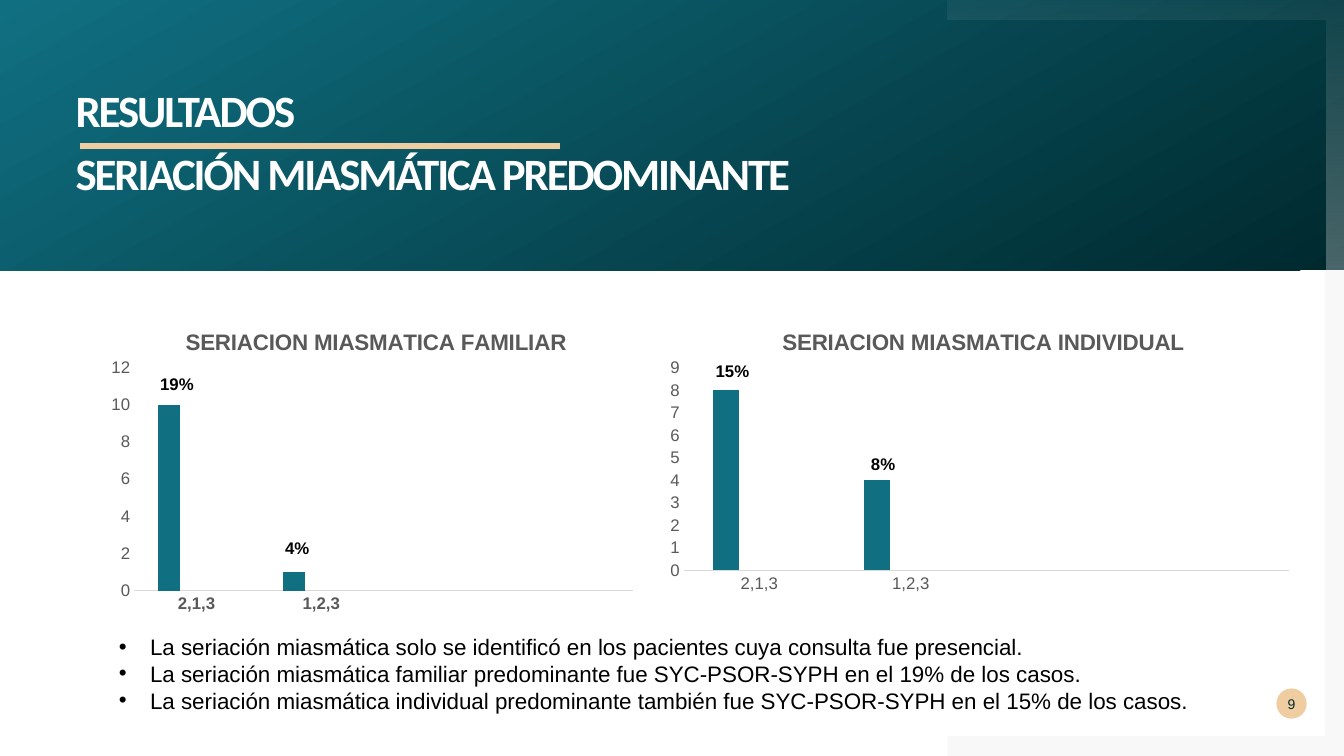
from dataclasses import dataclass

from lxml.etree import SubElement
from pptx import Presentation
from pptx.chart.data import CategoryChartData
from pptx.dml.color import RGBColor as RGB
from pptx.enum.chart import XL_CHART_TYPE as ChartType, XL_TICK_MARK as Tick
from pptx.enum.shapes import MSO_CONNECTOR as Connector, MSO_SHAPE as Shape
from pptx.enum.text import MSO_ANCHOR as Anchor, PP_ALIGN as Align
from pptx.oxml import parse_xml
from pptx.oxml.ns import nsdecls, qn
from pptx.util import Inches, Pt


@dataclass(frozen=True)
class Theme:
    teal: str = "107082"
    deep: str = "00292E"
    sand: str = "F0CDA1"
    white: str = "FFFFFF"
    black: str = "000000"
    grey: str = "808080"
    label: str = "595959"
    rule: str = "D9D9D9"
    series: tuple = ("107082", "00AEEF", "EC7216")
    heading: str = "Calibri"
    body: str = "Arial"
    heading_size: float = 32
    body_size: float = 16
    label_size: float = 12
    small_size: float = 10


def color(value):
    return RGB.from_string(value)


def style_font(font, size, hue, name, bold=False):
    font.size, font.name, font.bold = Pt(size), name, bold
    font.color.rgb = color(hue)


def write(frame, text, *, size, hue, name, bold=False, align=None, line=None,
          spacing=None, bullet=None, inset=None, wrap=True):
    """Fill a text frame, one paragraph per line of text."""
    frame.word_wrap = wrap
    if inset is not None:
        frame.margin_left = frame.margin_right = Inches(inset)
        frame.margin_top = frame.margin_bottom = Inches(inset)
    for index, words in enumerate(text.split("\n")):
        paragraph = frame.add_paragraph() if index else frame.paragraphs[0]
        paragraph.alignment, paragraph.line_spacing = align, line
        run = paragraph.add_run()
        run.text = words
        style_font(run.font, size, hue, name, bold)
        if spacing is not None:
            run.font._element.set("spc", str(int(spacing * 100)))
        if bullet:
            props = paragraph._p.get_or_add_pPr()
            props.set("marL", str(Inches(0.31)))
            props.set("indent", str(Inches(-0.31)))
            SubElement(props, qn("a:buFont")).set("typeface", name)
            SubElement(props, qn("a:buChar")).set("char", bullet)


def place(parent, box, left, top, width=None, height=None):
    """Set a chart part's position, in inches, within the chart's box."""
    values = {"x": (left - box[0]) / box[2], "y": (top - box[1]) / box[3]}
    target = ""
    if width:
        values.update(w=width / box[2], h=height / box[3])
        target = '<c:layoutTarget val="inner"/>'
    modes = "".join(f'<c:{axis}Mode val="edge"/>' for axis in "xy")
    sizes = "".join(f'<c:{key} val="{value:.4f}"/>' for key, value in values.items())
    layout = parse_xml(f'<c:layout {nsdecls("c")}><c:manualLayout>{target}{modes}{sizes}'
                       '</c:manualLayout></c:layout>')
    for old in parent.findall(qn("c:layout")):
        parent.remove(old)
    text = parent.find(qn("c:tx"))
    parent.insert(0 if text is None else 1, layout)


class SlideBuilder:
    def __init__(self, slide, theme):
        self.slide, self.theme, self.shapes = slide, theme, slide.shapes

    def paint(self, shape, fill, angle=None, alphas=()):
        """Apply one solid colour, or a gradient when an angle is given."""
        shape.shadow.inherit = False
        shape.line.fill.background()
        if angle is None:
            shape.fill.solid()
            shape.fill.fore_color.rgb = color(fill)
        else:
            shape.fill.gradient()
            shape.fill.gradient_angle = angle
            for stop, hue in zip(shape.fill.gradient_stops, fill):
                stop.color.rgb = color(hue)
        for node, alpha in zip(shape._element.spPr.iter(qn("a:srgbClr")), alphas):
            SubElement(node, qn("a:alpha")).set("val", str(alpha * 1000))
        return shape

    def block(self, kind, box, fill, angle=None):
        return self.paint(self.shapes.add_shape(kind, *map(Inches, box)), fill, angle)

    def outline(self, points, fill, angle=None, alphas=()):
        start, *rest = [(Inches(x), Inches(y)) for x, y in points]
        builder = self.shapes.build_freeform(*start)
        builder.add_line_segments(rest, close=True)
        return self.paint(builder.convert_to_shape(), fill, angle, alphas)

    def line(self, x1, y1, x2, y2, hue, width):
        rule = self.shapes.add_connector(Connector.STRAIGHT, *map(Inches, (x1, y1, x2, y2)))
        rule.line.color.rgb = color(hue)
        rule.line.width = Pt(width)
        SubElement(rule._element.spPr, qn("a:effectLst"))

    def text(self, box, words, **style):
        write(self.shapes.add_textbox(*map(Inches, box)).text_frame, words, **style)

    def heading(self, box, words):
        self.text(box, words, size=self.theme.heading_size, hue=self.theme.white,
                  name=self.theme.heading, bold=True, line=0.9, spacing=-1.5, inset=0)

    def columns(self, box, title, title_at, plot, values, top, step, bold_categories):
        theme = self.theme
        data = CategoryChartData()
        data.categories = ["2,1,3", "1,2,3", "", ""]
        data.add_series("Series 1", (*values, None, None))
        for name in ("Series 2", "Series 3"):
            data.add_series(name, (None,) * 4)
        chart = self.shapes.add_chart(ChartType.COLUMN_CLUSTERED, *map(Inches, box), data).chart
        style_font(chart.font, theme.small_size, theme.black, theme.body)
        chart.has_legend = False

        chart.has_title = True
        write(chart.chart_title.text_frame, title, size=theme.body_size, hue=theme.label,
              name=theme.body, bold=True)
        chart.chart_title.include_in_layout = False
        place(chart.chart_title._element, box, *title_at)
        place(chart._chartSpace.chart.plotArea, box, *plot)

        bars = chart.plots[0]
        bars.gap_width, bars.overlap, bars.vary_by_categories = 219, -27, False
        for series, hue in zip(bars.series, theme.series):
            series.format.fill.solid()
            series.format.fill.fore_color.rgb = color(hue)

        category, value = chart.category_axis, chart.value_axis
        for axis, bold in ((category, bold_categories), (value, False)):
            axis.has_major_gridlines = False
            axis.major_tick_mark = axis.minor_tick_mark = Tick.NONE
            style_font(axis.tick_labels.font, theme.label_size, theme.label, theme.body, bold)
        category.format.line.color.rgb = color(theme.rule)
        category.format.line.width = Pt(0.75)
        value.format.line.fill.background()
        value.minimum_scale, value.maximum_scale, value.major_unit = 0, top, step


def main():
    theme = Theme()
    deck = Presentation()
    deck.slide_width, deck.slide_height = Inches(13.33), Inches(7.5)
    page = SlideBuilder(deck.slides.add_slide(deck.slide_layouts[6]), theme)

    # Corner frame and header band
    page.outline([(13.14, 2.68), (13.33, 2.68), (13.33, 7.5), (9.4, 7.5),
                  (9.4, 7.3), (13.14, 7.3)], theme.grey, alphas=(5,))
    page.block(Shape.RECTANGLE, (0, 0, 13.33, 2.68), (theme.deep, theme.teal), angle=120)
    page.outline([(9.4, 0), (13.33, 0), (13.33, 2.68), (13.14, 2.68),
                  (13.14, 0.2), (9.4, 0.2)], (theme.white, theme.white),
                 angle=270, alphas=(5, 30))

    # Headings
    page.heading((0.75, 0.88, 8.27, 0.4), "RESULTADOS")
    page.line(0.79, 1.45, 5.55, 1.45, theme.sand, 4.32)
    page.heading((0.75, 1.51, 9.32, 0.4), "SERIACIÓN MIASMÁTICA PREDOMINANTE")

    # Page number
    badge = page.block(Shape.OVAL, (12.66, 6.83, 0.3, 0.3), theme.sand).text_frame
    badge.vertical_anchor = Anchor.MIDDLE
    write(badge, "9", size=theme.small_size, hue=theme.deep, name=theme.body,
          align=Align.CENTER, inset=0)

    # Charts
    page.columns((0.99, 3.05, 5.39, 3.09), "SERIACION MIASMATICA FAMILIAR", (1.8, 3.21),
                 (1.33, 3.65, 4.95, 2.21), (10, 1), 12, 2, True)
    page.columns((6.51, 3.05, 6.4, 2.88), "SERIACION MIASMATICA INDIVIDUAL", (7.72, 3.21),
                 (6.78, 3.65, 6.01, 2.01), (8, 4), 9, 1, False)

    # Percentages above the bars
    for left, top, share in ((1.49, 3.66, "19%"), (2.73, 5.29, "4%"),
                             (7, 3.53, "15%"), (8.54, 4.45, "8%")):
        page.text((left, top, 0.54, 0.3), share, size=theme.label_size, hue=theme.black,
                  name=theme.body, bold=True)

    # Findings
    findings = (
        "La seriación miasmática solo se identificó en los pacientes cuya consulta fue presencial.",
        "La seriación miasmática familiar predominante fue SYC-PSOR-SYPH en el 19% de los casos.",
        "La seriación miasmática individual predominante también fue SYC-PSOR-SYPH en el 15% "
        "de los casos.",
    )
    page.text((1.08, 6.23, 10.87, 0.91), "\n".join(findings), size=theme.body_size,
              hue=theme.black, name=theme.body, bullet="•")

    deck.save("out.pptx")


if __name__ == "__main__":
    main()
